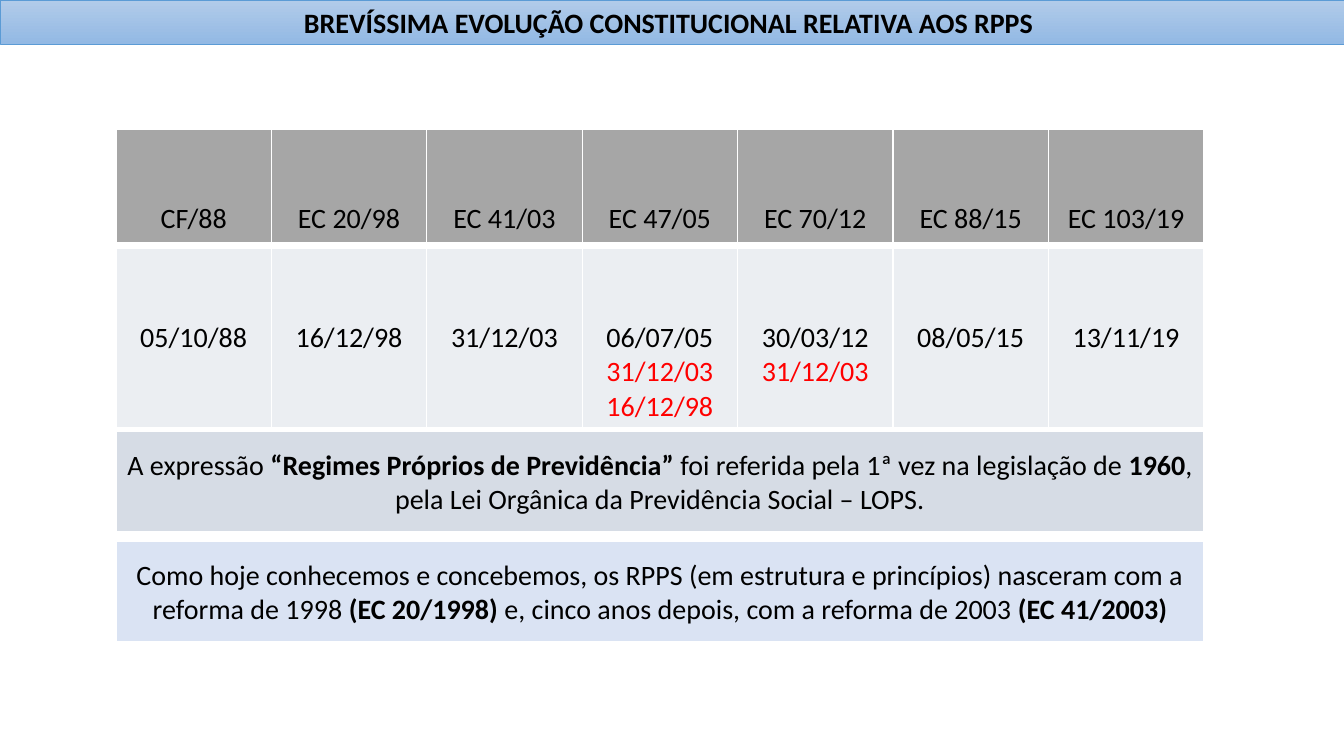
from lxml.etree import SubElement
from pptx import Presentation
from pptx.dml.color import RGBColor
from pptx.enum.shapes import MSO_SHAPE
from pptx.enum.text import MSO_ANCHOR, PP_ALIGN
from pptx.oxml.ns import qn
from pptx.util import Emu, Pt

BLACK = RGBColor(0x00, 0x00, 0x00)
WHITE = RGBColor(0xFF, 0xFF, 0xFF)
RED = RGBColor(0xFF, 0x00, 0x00)
GRAY = RGBColor(0xA6, 0xA6, 0xA6)
PALE_GRAY = RGBColor(0xEB, 0xEE, 0xF2)
BLUE_GRAY = RGBColor(0xD6, 0xDC, 0xE5)
PALE_BLUE = RGBColor(0xDA, 0xE3, 0xF3)
BLUE = RGBColor(0x5B, 0x9B, 0xD5)
BANNER_TOP = RGBColor(0xB1, 0xCB, 0xE9)
BANNER_BOTTOM = RGBColor(0x93, 0xB9, 0xE4)

LEFT, WIDTH = 116, 1088
BORDERS = {"a:lnL": 1, "a:lnR": 1, "a:lnT": 1, "a:lnB": 3}


def px(length):
    return Emu(length * 12192000 // 1344)


def format_paragraph(paragraph, color=BLACK):
    paragraph.alignment = PP_ALIGN.CENTER
    paragraph.font.name = "Calibri"
    paragraph.font.size = Pt(20)
    paragraph.font.color.rgb = color


presentation = Presentation()
presentation.slide_width = px(1344)
presentation.slide_height = px(756)
slide = presentation.slides.add_slide(presentation.slide_layouts[5])

title = slide.shapes.title
title.left, title.top, title.width, title.height = px(0), px(0), px(1344), px(44)
title.fill.gradient()
title.fill.gradient_angle = 270
for stop, color in zip(title.fill.gradient_stops, (BANNER_TOP, BANNER_BOTTOM)):
    stop.color.rgb = color
title.line.color.rgb = BLUE
title.line.width = Pt(0.5)
title.text_frame.text = "BREVÍSSIMA EVOLUÇÃO CONSTITUCIONAL RELATIVA AOS RPPS "
format_paragraph(title.text_frame.paragraphs[0])
title.text_frame.paragraphs[0].font.bold = True

amendments = [
    ("CF/88", ["05/10/88"]),
    ("EC 20/98", ["16/12/98"]),
    ("EC 41/03", ["31/12/03"]),
    ("EC 47/05", ["06/07/05", "31/12/03", "16/12/98"]),
    ("EC 70/12", ["30/03/12", "31/12/03"]),
    ("EC 88/15", ["08/05/15"]),
    ("EC 103/19", ["13/11/19"]),
]
tables = [
    (129, 115, GRAY, [[name] for name, dates in amendments]),
    (248, 179, PALE_GRAY, [dates for name, dates in amendments]),
]
for top, height, fill_color, entries in tables:
    table = slide.shapes.add_table(
        1, len(entries), px(LEFT), px(top), px(WIDTH), px(height)).table
    table.first_row = False
    table.horz_banding = False
    for column, cell, lines in zip(table.columns, table.rows[0].cells, entries):
        column.width = px(WIDTH) // len(entries)
        cell.margin_top = px(73)
        cell.text = "\n".join(lines)
        for index, paragraph in enumerate(cell.text_frame.paragraphs):
            format_paragraph(paragraph, RED if index else BLACK)
        properties = cell._tc.get_or_add_tcPr()
        for tag, points in BORDERS.items():
            border = SubElement(properties, qn(tag), w=str(Pt(points)))
            solid = SubElement(border, qn("a:solidFill"))
            SubElement(solid, qn("a:srgbClr"), val=str(WHITE))
        cell.fill.solid()
        cell.fill.fore_color.rgb = fill_color

notes = [
    (431, BLUE_GRAY, [
        ("A expressão ", False),
        ("“Regimes Próprios de Previdência”", True),
        (" foi referida pela 1ª vez na legislação de ", False),
        ("1960", True),
        (", pela Lei Orgânica da Previdência Social – LOPS.", False),
    ]),
    (541, PALE_BLUE, [
        ("Como hoje conhecemos e concebemos, os RPPS (em estrutura e princípios) "
         "nasceram com a reforma de 1998 ", False),
        ("(EC 20/1998)", True),
        (" e, cinco anos depois, com a reforma de 2003 ", False),
        ("(EC 41/2003)", True),
    ]),
]
for top, fill_color, segments in notes:
    shape = slide.shapes.add_shape(
        MSO_SHAPE.RECTANGLE, px(LEFT), px(top), px(WIDTH), px(101))
    shape.shadow.inherit = False
    shape.fill.solid()
    shape.fill.fore_color.rgb = fill_color
    shape.line.color.rgb = WHITE
    shape.line.width = Pt(1)
    shape.text_frame.word_wrap = True
    shape.text_frame.vertical_anchor = MSO_ANCHOR.MIDDLE
    paragraph = shape.text_frame.paragraphs[0]
    format_paragraph(paragraph)
    for text, bold in segments:
        run = paragraph.add_run()
        run.text = text
        run.font.bold = bold

presentation.save("out.pptx")
